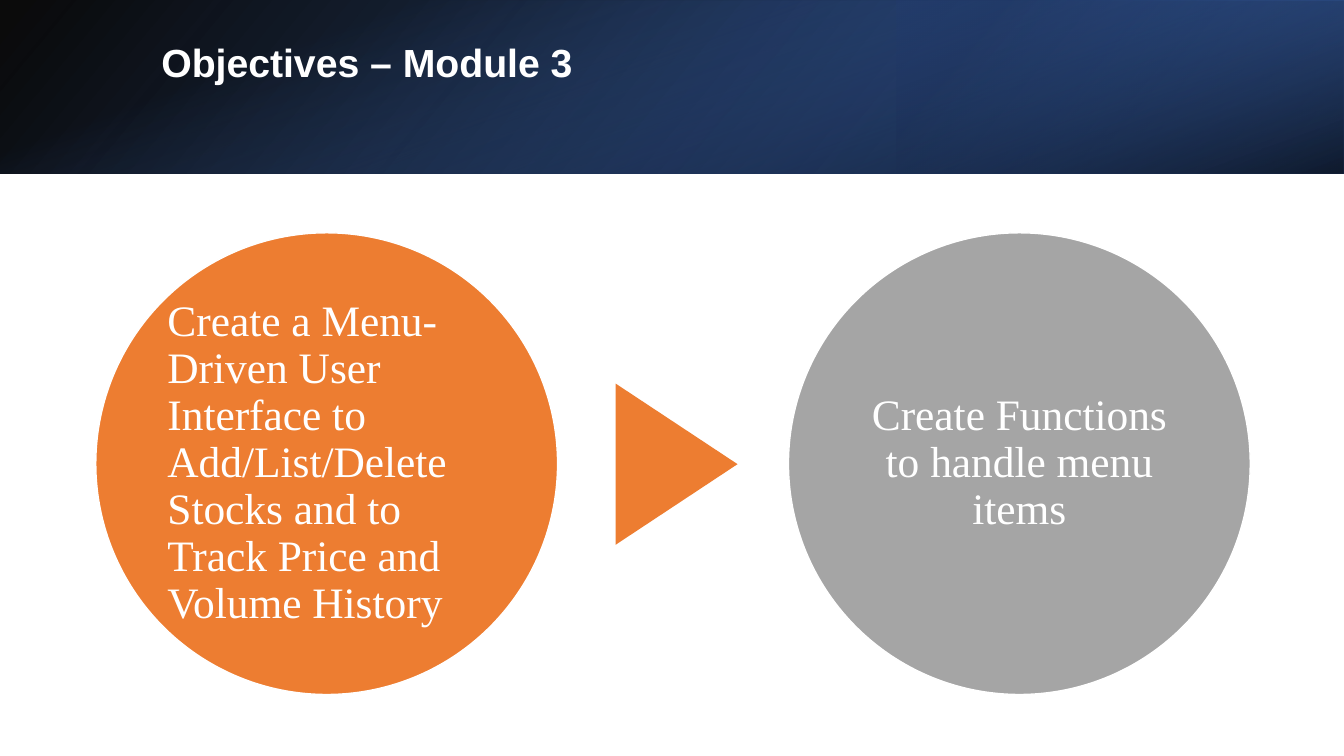
"""Build the Module 3 objectives slide."""
from pptx import Presentation
from pptx import util as u
from pptx.dml.color import RGBColor
from pptx.enum import shapes, text
from pptx.oxml.ns import qn
from lxml import etree

SHAPE = shapes.MSO_SHAPE
ALIGN = text.PP_ALIGN


def rgb(value):
    return RGBColor.from_string(value)


class Deck:
    WHITE, ORANGE, GREY = "FFFFFF", "ED7D31", "A5A5A5"
    TITLE_FONT, BODY_FONT = "Arial", "Times New Roman"

    def __init__(self):
        self.prs = Presentation()
        self.prs.slide_width = u.Inches(13.33)
        self.prs.slide_height = u.Inches(7.5)
        self.slide = self.prs.slides.add_slide(self.prs.slide_layouts[5])

    def shape(self, kind, box, rotation=0):
        sp = self.slide.shapes.add_shape(kind, *map(u.Inches, box))
        sp.rotation = rotation
        sp.shadow.inherit = False
        sp.line.fill.background()
        return sp

    def band(self, box, stops, angle, rotation=0, flip=False):
        sp = self.shape(SHAPE.RECTANGLE, box, rotation)
        if flip:
            sp._element.spPr.find(qn("a:xfrm")).set("flipH", "1")
        sp.fill.gradient()
        sp.fill.gradient_angle = 360 - angle
        for stop, (position, color, _) in zip(sp.fill.gradient_stops, stops):
            stop.position = position / 100
            stop.color.rgb = rgb(color)
        colors = sp._element.spPr.iter(qn("a:srgbClr"))
        for clr, (_, _, opacity) in zip(list(colors), stops):
            etree.SubElement(clr, qn("a:alpha")).set("val", str(opacity * 1000))

    def label(self, sp, words, font, size, align, anchor, bold=False):
        tf = sp.text_frame
        tf.word_wrap = True
        tf.auto_size = text.MSO_AUTO_SIZE.NONE
        tf.vertical_anchor = anchor
        p = tf.paragraphs[0]
        p.alignment = align
        p.line_spacing = 0.9
        r = p.add_run()
        r.text = words
        r.font.name = font
        r.font.size = u.Pt(size)
        r.font.bold = bold
        r.font.color.rgb = rgb(self.WHITE)
        return tf

    def title(self, words, box):
        sp = self.slide.shapes.title
        sp.left, sp.top, sp.width, sp.height = map(u.Inches, box)
        self.slide.shapes._spTree.append(sp._element)
        self.label(sp, words, self.TITLE_FONT, 28, ALIGN.LEFT,
                   text.MSO_ANCHOR.TOP, bold=True)

    def circle(self, left, color, words, align):
        sp = self.shape(SHAPE.OVAL, (left, 2.31, 4.58, 4.58))
        sp.fill.solid()
        sp.fill.fore_color.rgb = rgb(color)
        sp.line.color.rgb = rgb(self.WHITE)
        sp.line.width = u.Pt(1)
        tf = self.label(sp, words, self.BODY_FONT, 31, align,
                        text.MSO_ANCHOR.MIDDLE)
        tf.margin_left = tf.margin_right = u.Inches(0.04)
        tf.margin_top = tf.margin_bottom = u.Inches(0.04)

    def pointer(self, box, color):
        sp = self.shape(SHAPE.ISOSCELES_TRIANGLE, box, rotation=90)
        sp.fill.solid()
        sp.fill.fore_color.rgb = rgb(color)


def main():
    deck = Deck()
    deck.band((0, 0, 13.33, 1.72),
              [(0, "000000", 96), (100, "2F5597", 100)], 140, flip=True)
    deck.band((8.89, 0, 4.44, 1.72),
              [(19, "203864", 68), (100, "4472C4", 79)], 320, 180, flip=True)
    deck.band((5.8, -5.8, 1.72, 13.33),
              [(23, "4472C4", 0), (99, "000000", 74)], 340, 90)
    deck.title("Objectives – Module 3", (1.5, 0.38, 10.98, 0.96))
    deck.circle(0.95, deck.ORANGE,
                "Create a Menu-Driven User Interface to Add/List/Delete "
                "Stocks and to Track Price and Volume History", ALIGN.LEFT)
    deck.pointer((5.91, 4, 1.6, 1.21), deck.ORANGE)
    deck.circle(7.82, deck.GREY, "Create Functions to handle menu items",
                ALIGN.CENTER)
    deck.prs.save("out.pptx")


if __name__ == "__main__":
    main()
